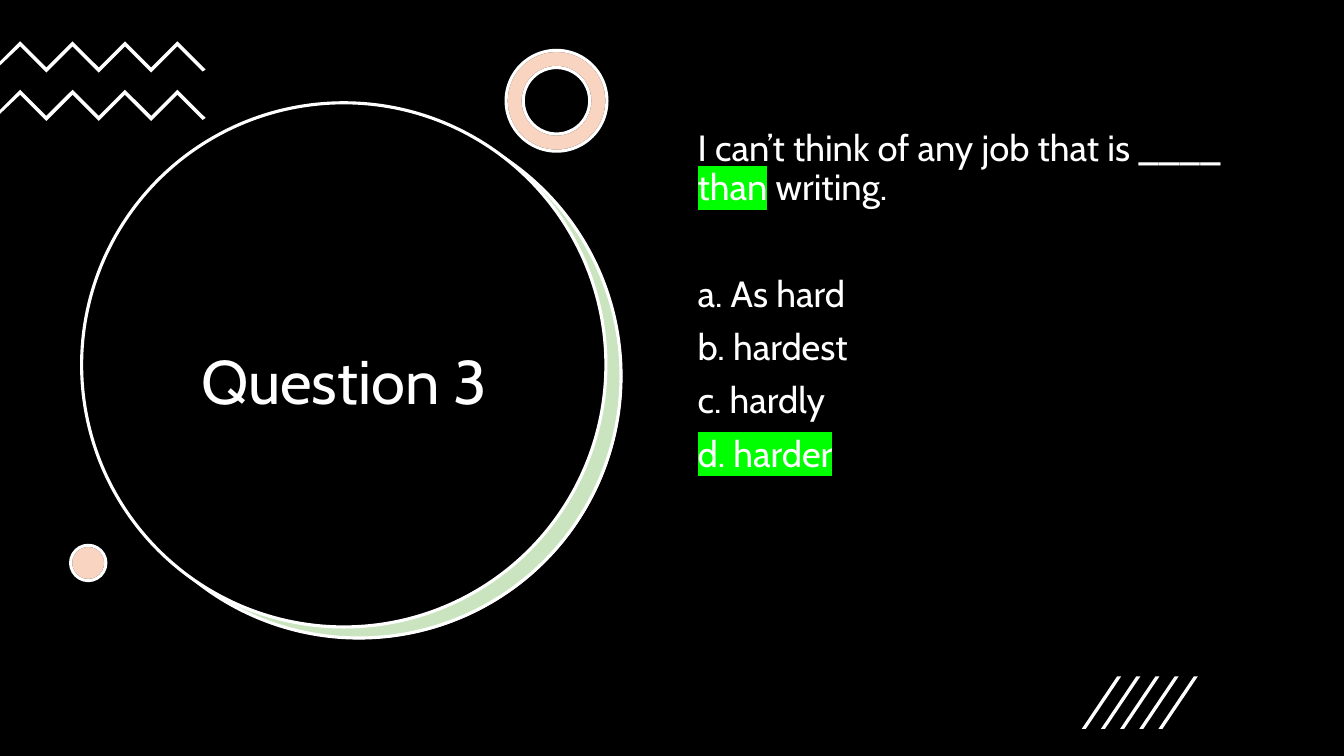
"""Build the Question 3 quiz slide."""
from lxml import etree
from pptx import Presentation
from pptx.dml.color import RGBColor
from pptx.enum import shapes, text
from pptx.oxml import ns
from pptx.util import Inches, Pt

WHITE, BLACK, GREEN, ORANGE, LIME = "FFFFFF", "000000", "4EA72E", "E97132", "00FF00"
SHAPE = shapes.MSO_SHAPE


def paint(sp, fill, line=None, alpha=None):
    """Fill and outline a shape, without a shadow."""
    sp.shadow.inherit = False
    sp.fill.solid()
    sp.fill.fore_color.rgb = RGBColor.from_string(fill)
    if alpha:
        color = sp.fill._xPr.find(ns.qn("a:solidFill"))[0]
        etree.SubElement(color, ns.qn("a:alpha"), val=str(alpha * 1000))
    if line:
        sp.line.color.rgb = RGBColor.from_string(line)
        sp.line.width = Pt(2.25)
    else:
        sp.line.fill.background()


def style(r, size, highlight=None):
    """Format a run, with a highlight if one is given."""
    r.font.size = Pt(size)
    r.font.color.rgb = RGBColor.from_string(WHITE)
    r.font.name = "Cabin"
    if highlight:
        mark = etree.Element(ns.qn("a:highlight"))
        etree.SubElement(mark, ns.qn("a:srgbClr"), val=highlight)
        r.font._element.find(ns.qn("a:latin")).addprevious(mark)


prs = Presentation()
prs.slide_width, prs.slide_height = Inches(13.33), Inches(7.5)
s = prs.slides.add_slide(prs.slide_layouts[6])

for kind, x, y, w, h, fill, line, alpha in [
    (SHAPE.RECTANGLE, 0, 0, 13.33, 7.5, BLACK, None, None),
    (SHAPE.OVAL, 0.97, 1.14, 5.2, 5.2, WHITE, None, None),
    (SHAPE.OVAL, 0.96, 1.13, 5.2, 5.2, GREEN, WHITE, 30),
    (SHAPE.OVAL, 0.81, 1.02, 5.2, 5.2, BLACK, WHITE, None),
    (SHAPE.DONUT, 5.02, 0.5, 1, 1, WHITE, BLACK, None),
    (SHAPE.DONUT, 5.02, 0.5, 1, 1, ORANGE, WHITE, 30),
    (SHAPE.OVAL, 0.7, 5.41, 0.35, 0.35, WHITE, BLACK, None),
    (SHAPE.OVAL, 0.7, 5.41, 0.35, 0.35, ORANGE, WHITE, 30),
]:
    sp = s.shapes.add_shape(kind, Inches(x), Inches(y), Inches(w), Inches(h))
    if kind == SHAPE.DONUT:
        sp.adjustments[0] = 0.17
    paint(sp, fill, line, alpha)

zigzags = []
for top in (0.41, 0.89):
    edge = [(0.2 + 0.26 * i, top + 0.26 * (i % 2)) for i in range(7)]
    under = [(x, y + 0.05) for x, y in reversed(edge)]
    zigzags.append(edge + [(2.04, top + 0.28), (2.01, top + 0.3)] + under
                   + [(0, top + 0.24), (0, top + 0.2)])
slashes = []
for i in range(5):
    x = 10.73 + 0.19 * i
    slashes.append([(x + 0.04, 7.23), (x, 7.23), (x + 0.35, 6.71), (x + 0.39, 6.71)])

for outlines in (zigzags, slashes):
    group = s.shapes.add_group_shape()
    for outline in outlines:
        points = [(Inches(x), Inches(y)) for x, y in outline]
        builder = group.shapes.build_freeform(*points[0])
        builder.add_line_segments(points[1:])
        paint(builder.convert_to_shape(), WHITE)

title = s.shapes.add_textbox(Inches(1.21), Inches(2.05), Inches(4.41), Inches(3.52))
tf = title.text_frame
tf.word_wrap = True
tf.vertical_anchor = text.MSO_ANCHOR.MIDDLE
tf.text = "Question 3"
p = tf.paragraphs[0]
p.alignment = text.PP_ALIGN.CENTER
p.line_spacing = 0.9
style(p.runs[0], 44)

body = s.shapes.add_textbox(Inches(6.82), Inches(1.24), Inches(5.71), Inches(4.76))
tf = body.text_frame
tf.word_wrap = True
for i, (before, parts) in enumerate([
    (10, [("I can’t think of any job that is ____ ", None), ("than", LIME), (" writing.", None)]),
    (48, [("a. As hard", None)]),
    (10, [("b. hardest", None)]),
    (10, [("c. hardly", None)]),
    (10, [("d. harder", LIME)]),
]):
    p = tf.add_paragraph() if i else tf.paragraphs[0]
    p.line_spacing = 0.9
    p.space_before = Pt(before)
    for words, highlight in parts:
        r = p.add_run()
        r.text = words
        style(r, 26, highlight)

prs.save("out.pptx")
